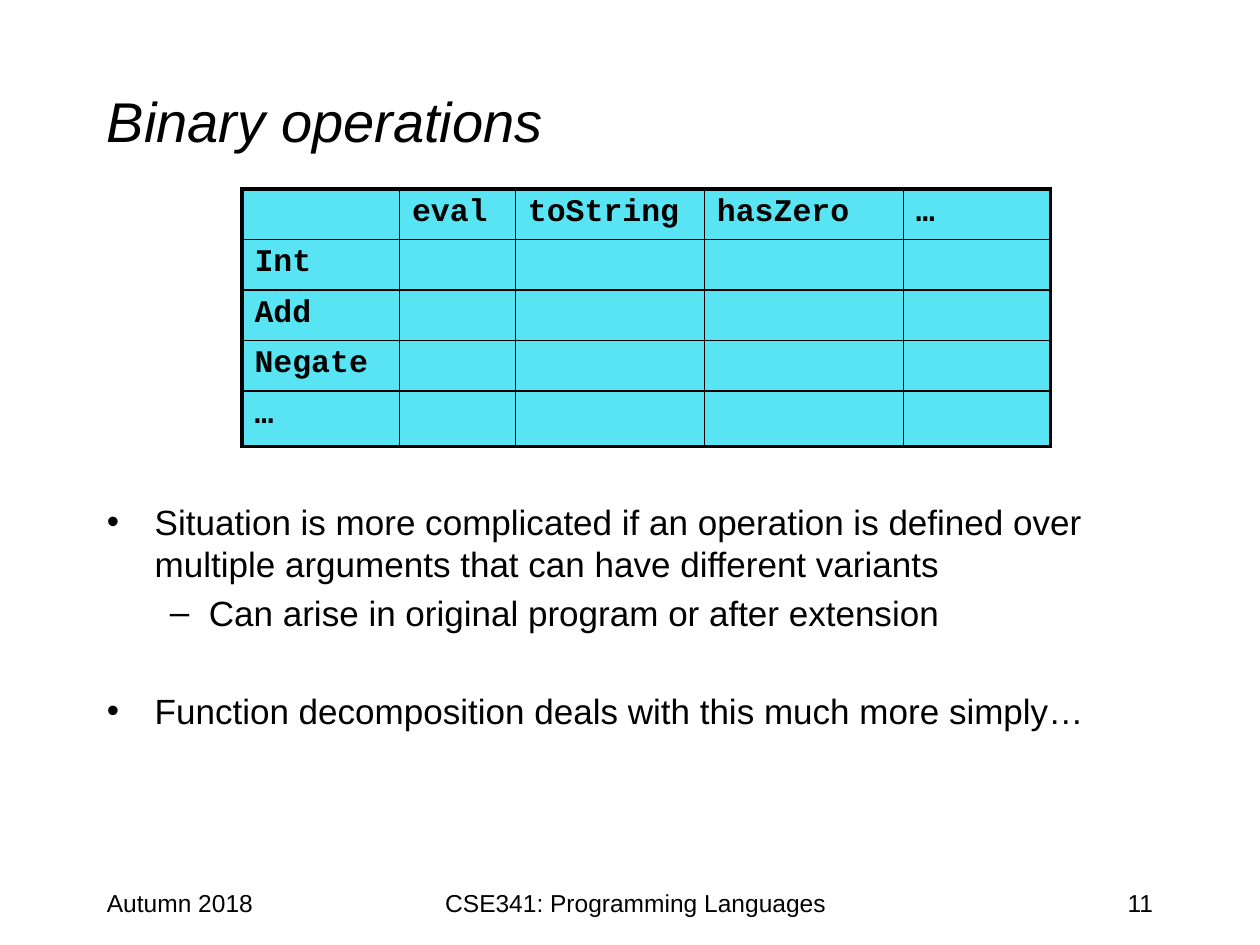
from lxml import etree
from pptx import Presentation
from pptx.dml.color import RGBColor
from pptx.enum.text import MSO_ANCHOR, PP_ALIGN
from pptx.oxml.ns import qn
from pptx.util import Inches, Pt

LEFT, CENTER, RIGHT = PP_ALIGN.LEFT, PP_ALIGN.CENTER, PP_ALIGN.RIGHT
TOP, MIDDLE = MSO_ANCHOR.TOP, MSO_ANCHOR.MIDDLE
BLACK, CYAN = "000000", "59E4F3"
THIN, THICK = 1, 2.25

OPERATIONS = ["eval", "toString", "hasZero", "…"]
VARIANTS = ["Int", "Add", "Negate", "…"]
# bullet, left margin and hanging indent (inches), space before (points), text
POINTS = [
    ("•", 0.38, 0.38, 4, "Situation is more complicated if an operation is defined over "
                         "multiple arguments that can have different variants"),
    ("–", 0.81, 0.31, 4, "Can arise in original program or after extension"),
    ("•", 0.38, 0.38, 32, "Function decomposition deals with this much more simply…"),
]
FOOTERS = [
    (0.75, 2.08, "Autumn 2018", LEFT),
    (3.17, 3.75, "CSE341: Programming Languages", CENTER),
    (7.17, 2.08, "11", RIGHT),
]


def color(value):
    return RGBColor.from_string(value)


class SlideBuilder:
    font = "Arial"
    code_font = "Courier New"
    code_size = 18

    def __init__(self, slide):
        self.slide = slide

    def run(self, p, text, size, font=None, bold=False, italic=False):
        r = p.add_run()
        r.text = text
        r.font.name = font or self.font
        r.font.size = Pt(size)
        r.font.bold = bold
        r.font.italic = italic
        r.font.color.rgb = color(BLACK)

    def frame(self, x, y, w, h, anchor=TOP):
        sp = self.slide.shapes.add_textbox(Inches(x), Inches(y), Inches(w), Inches(h))
        tf = sp.text_frame
        tf.word_wrap = True
        tf.vertical_anchor = anchor
        return tf

    def text(self, x, y, w, h, text, size, align=LEFT, anchor=TOP, italic=False):
        p = self.frame(x, y, w, h, anchor).paragraphs[0]
        p.alignment = align
        self.run(p, text, size, italic=italic)

    def bullets(self, x, y, w, h, points, size):
        tf = self.frame(x, y, w, h)
        for i, (mark, margin, hang, before, text) in enumerate(points):
            p = tf.add_paragraph() if i else tf.paragraphs[0]
            p.space_before = Pt(before)
            p.level = 1 if mark == "–" else 0
            pPr = p._p.get_or_add_pPr()
            pPr.set("marL", str(Inches(margin)))
            pPr.set("indent", str(-Inches(hang)))
            etree.SubElement(pPr, qn("a:buFont"), typeface=self.font)
            etree.SubElement(pPr, qn("a:buChar"), char=mark)
            self.run(p, text, size)

    def borders(self, cell, widths):
        """Set the left, right, top and bottom borders, in that order."""
        tcPr = cell._tc.get_or_add_tcPr()
        for i, (side, width) in enumerate(zip("LRTB", widths)):
            ln = etree.Element(qn(f"a:ln{side}"), w=str(Pt(width)))
            fill = etree.SubElement(ln, qn("a:solidFill"))
            etree.SubElement(fill, qn("a:srgbClr"), val=BLACK)
            tcPr.insert(i, ln)

    def table(self, x, y, col_widths, row_heights, rows):
        n_rows, n_cols = len(row_heights), len(col_widths)
        table = self.slide.shapes.add_table(
            n_rows, n_cols, Inches(x), Inches(y),
            Inches(sum(col_widths)), Inches(sum(row_heights))).table
        table.first_row = table.horz_banding = False
        for col, width in zip(table.columns, col_widths):
            col.width = Inches(width)
        for row, height in zip(table.rows, row_heights):
            row.height = Inches(height)
        for i, row in enumerate(rows):
            for j, text in enumerate(row):
                cell = table.cell(i, j)
                cell.fill.solid()
                cell.fill.fore_color.rgb = color(CYAN)
                outer = (j == 0, j == n_cols - 1, i == 0, i == n_rows - 1)
                self.borders(cell, [THICK if edge else THIN for edge in outer])
                p = cell.text_frame.paragraphs[0]
                if text:
                    self.run(p, text, self.code_size, self.code_font, bold=True)
                else:
                    # a smaller empty line keeps the row at its set height
                    etree.SubElement(p._p, qn("a:endParaRPr"), sz="1400")


def main():
    prs = Presentation()
    prs.slide_width, prs.slide_height = Inches(10), Inches(7.5)
    s = SlideBuilder(prs.slides.add_slide(prs.slide_layouts[6]))

    s.text(0.75, 0.33, 8.5, 1.25, "Binary operations", 32, anchor=MIDDLE, italic=True)
    s.bullets(0.75, 3.92, 8.5, 2.17, POINTS, 20)
    for x, w, text, align in FOOTERS:
        s.text(x, 7, w, 0.5, text, 14, align)

    blanks = [""] * len(OPERATIONS)
    rows = [["", *OPERATIONS]] + [[variant, *blanks] for variant in VARIANTS]
    s.table(1.92, 1.5, [1.25, 0.92, 1.5, 1.58, 1.17], [0.38] * 4 + [0.44], rows)

    prs.save("out.pptx")


if __name__ == "__main__":
    main()
